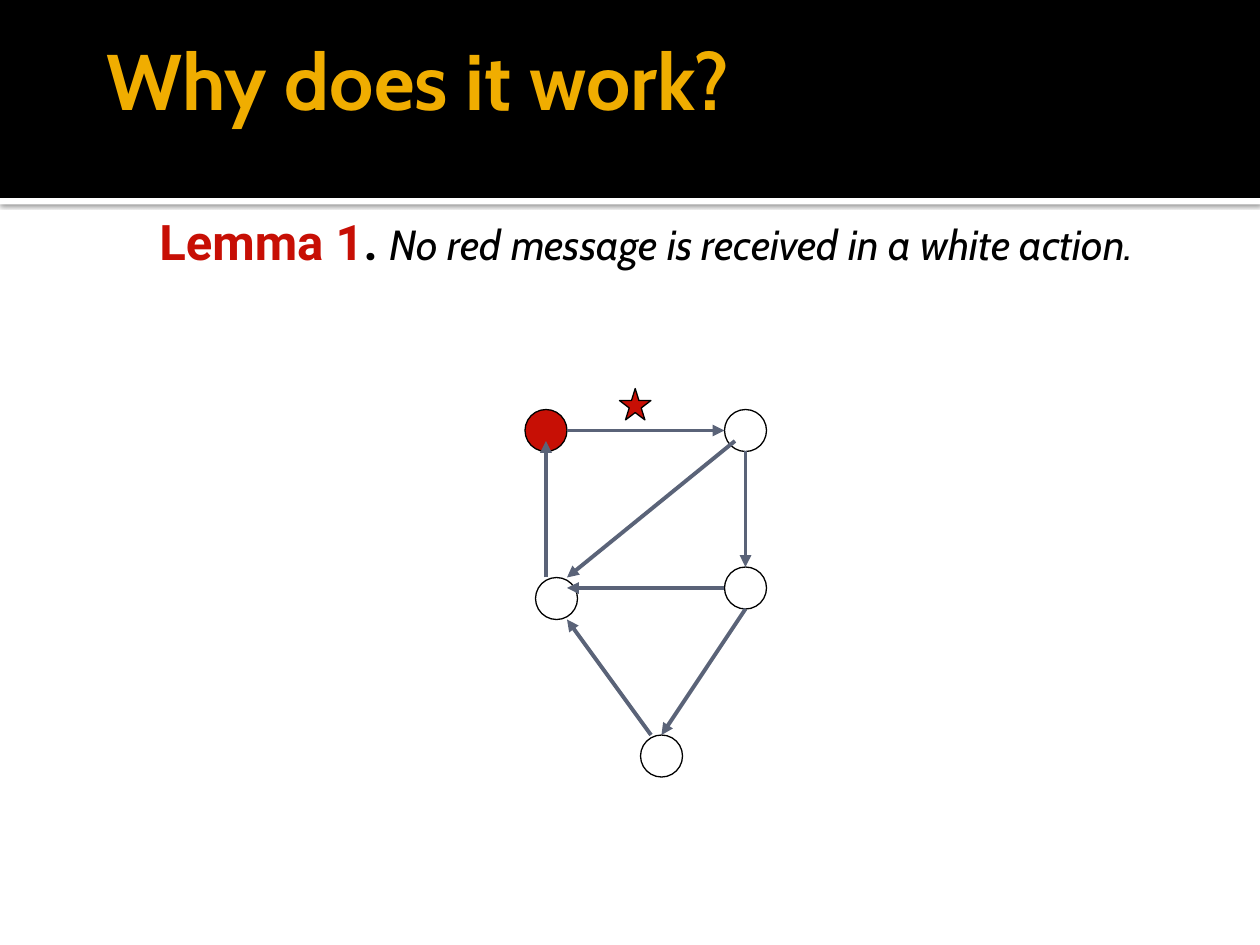
import pptx
import pptx.dml.color
import pptx.enum.shapes
import pptx.enum.text
import pptx.oxml
import pptx.oxml.ns
import pptx.util

Cm = pptx.util.Cm
Pt = pptx.util.Pt
RGBColor = pptx.dml.color.RGBColor
SHAPE = pptx.enum.shapes.MSO_SHAPE
ANCHOR = pptx.enum.text.MSO_ANCHOR

BLACK = RGBColor(0x00, 0x00, 0x00)
WHITE = RGBColor(0xFF, 0xFF, 0xFF)
GOLD = RGBColor(0xF0, 0xAD, 0x00)
RED = RGBColor(0xC7, 0x0F, 0x05)
SLATE = RGBColor(0x5A, 0x63, 0x78)

SLIDE_WIDTH, SLIDE_HEIGHT = Cm(25.4), Cm(19.05)
BAND_HEIGHT = Cm(3.99)
NODE_SIZE = 4

# Grid positions, twelve units to the inch
RED_NODE = (50, 39)
WHITE_NODES = [(69, 54), (51, 55), (69, 39), (61, 70)]
ARROWS = [
    ((54, 41), (69, 41)),
    ((71, 43), (71, 54)),
    ((69, 56), (54, 56)),
    ((52, 55), (52, 42)),
    ((70, 42), (54, 55)),
    ((71, 58), (63, 70)),
    ((62, 70), (54, 59)),
]


def grid(*units):
    return [Cm(2.54 * unit / 12) for unit in units]


def xml(markup):
    """Parse one DrawingML element whose tag has the a: prefix."""
    tag, rest = markup[:-2].partition(" ")[::2]
    return pptx.oxml.parse_xml(f"{tag} {pptx.oxml.ns.nsdecls('a')} {rest}/>")


def add_run(paragraph, text, *, font, size, color, bold=False, italic=False):
    run = paragraph.add_run()
    run.text = text
    run.font.name = font
    run.font.size = Pt(size)
    run.font.color.rgb = color
    run.font.bold = bold
    run.font.italic = italic


class SlideBuilder:
    heading_font = "Cabin"
    label_font = "Roboto"
    outline_width = Pt(0.75)
    arrow_width = Pt(2.25)

    def __init__(self, slide):
        self.slide = slide

    def shape(self, kind, left, top, width, height, fill=None, outline=None):
        shape = self.slide.shapes.add_shape(kind, left, top, width, height)
        shape.shadow.inherit = False
        if fill is None:
            shape.fill.background()
        else:
            shape.fill.solid()
            shape.fill.fore_color.rgb = fill
        if outline is None:
            shape.line.fill.background()
        else:
            shape.line.color.rgb = outline
            shape.line.width = self.outline_width
        return shape

    def header(self):
        """Put the black band and its white shadowed edge behind the title."""
        edge = self.shape(SHAPE.RECTANGLE, 0, BAND_HEIGHT, SLIDE_WIDTH, Cm(0.13), WHITE)
        effects = edge.element.spPr.find(pptx.oxml.ns.qn("a:effectLst"))
        shadow = xml(f'<a:outerShdw blurRad="{Pt(2.5)}" dist="{Pt(0.8)}" dir="5400000" rotWithShape="0"/>')
        color = xml('<a:srgbClr val="000000"/>')
        color.append(xml('<a:alpha val="60000"/>'))
        shadow.append(color)
        effects.append(shadow)
        band = self.shape(SHAPE.RECTANGLE, 0, 0, SLIDE_WIDTH, BAND_HEIGHT, BLACK)
        title = self.slide.shapes.title
        for shape in (edge, band):
            title.element.addprevious(shape.element)

    def format_frame(self, frame, anchor, top, right):
        frame.word_wrap = True
        frame.auto_size = pptx.enum.text.MSO_AUTO_SIZE.NONE
        frame.vertical_anchor = anchor
        frame.margin_left, frame.margin_bottom = Cm(0.25), Cm(0.13)
        frame.margin_top, frame.margin_right = top, right
        paragraph = frame.paragraphs[0]
        paragraph.alignment = pptx.enum.text.PP_ALIGN.LEFT
        return paragraph

    def title(self, text):
        title = self.slide.shapes.title
        title.left, title.top, title.width, title.height = grid(9, 0, 102, 15)
        paragraph = self.format_frame(title.text_frame, ANCHOR.MIDDLE, Cm(0.13), Cm(0.13))
        add_run(paragraph, text, font=self.heading_font, size=45, color=GOLD, bold=True)

    def lemma(self, label, statement):
        box = self.slide.shapes.add_textbox(*grid(14, 19, 100, 18))
        paragraph = self.format_frame(box.text_frame, ANCHOR.TOP, Cm(0.25), Cm(0.25))
        properties = paragraph._p.get_or_add_pPr()
        properties.set("marL", str(Cm(1.48)))
        properties.set("indent", str(-Cm(1.48)))
        add_run(paragraph, label, font=self.label_font, size=28, color=RED, bold=True)
        add_run(paragraph, ". ", font=self.label_font, size=28, color=BLACK, bold=True)
        add_run(paragraph, statement, font=self.heading_font, size=24, color=BLACK, italic=True)

    def node(self, position, fill=None):
        self.shape(SHAPE.OVAL, *grid(*position, NODE_SIZE, NODE_SIZE), fill, BLACK)

    def arrow(self, start, end):
        connector = self.slide.shapes.add_connector(
            pptx.enum.shapes.MSO_CONNECTOR.STRAIGHT, *grid(*start, *end))
        connector.line.color.rgb = SLATE
        connector.line.width = self.arrow_width
        connector.line._get_or_add_ln().append(xml('<a:tailEnd type="triangle"/>'))
        connector._element.spPr.append(xml("<a:effectLst/>"))

    def message_star(self):
        self.shape(SHAPE.STAR_5_POINT, *grid(59, 37, 3, 3), RED, BLACK)


def main():
    presentation = pptx.Presentation()
    presentation.slide_width = SLIDE_WIDTH
    presentation.slide_height = SLIDE_HEIGHT
    title_only = presentation.slide_layouts[5]
    builder = SlideBuilder(presentation.slides.add_slide(title_only))

    builder.header()
    builder.title("Why does it work?")
    builder.lemma("Lemma 1", "No red message is received in a white action.")
    builder.node(RED_NODE, RED)
    for position in WHITE_NODES:
        builder.node(position)
    for start, end in ARROWS:
        builder.arrow(start, end)
    builder.message_star()

    presentation.save("out.pptx")


if __name__ == "__main__":
    main()
